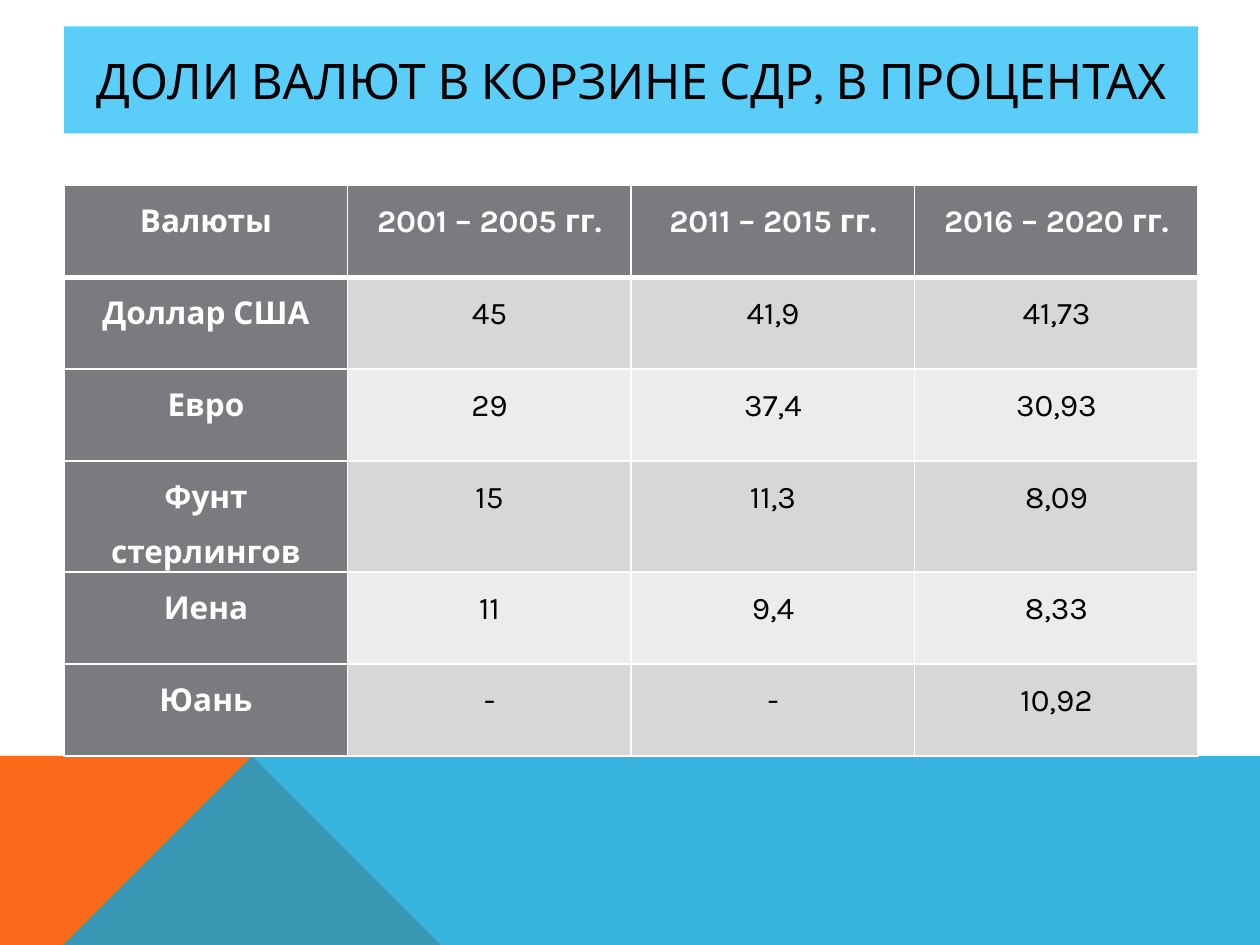
from dataclasses import dataclass

from lxml import etree
from pptx import Presentation
from pptx.dml.color import RGBColor
from pptx.enum import text
from pptx.oxml import ns
from pptx.util import Inches, Pt


@dataclass(frozen=True)
class Theme:
    font: str = "Karla"
    title_size: int = 28
    table_size: int = 18
    black: str = "000000"
    white: str = "FFFFFF"
    title_fill: str = "5ACEF9"
    header_fill: str = "797B7E"
    odd_fill: str = "D7D7D8"
    even_fill: str = "ECECEC"
    orange: str = "F96A1B"
    blue: str = "08A1D9"


@dataclass(frozen=True)
class Band:
    points: tuple[tuple[float, float], ...]
    color: str
    opacity: int = 100


THEME = Theme()
LEFT, WIDTH = 0.51, 9
ROW_HEIGHT = 0.73

BANDS = (
    Band(((0, 7.5), (0, 5.52), (2.23, 5.52), (3.91, 7.5)), THEME.orange),
    Band(((0, 7.5), (2.23, 5.52), (10, 5.53), (10, 7.5)), THEME.blue, 80),
)

ROWS = (
    ("Валюты", "2001 – 2005 гг.", "2011 – 2015 гг.", "2016 – 2020 гг."),
    ("Доллар США", "45", "41,9", "41,73"),
    ("Евро", "29", "37,4", "30,93"),
    ("Фунт стерлингов", "15", "11,3", "8,09"),
    ("Иена", "11", "9,4", "8,33"),
    ("Юань", "-", "-", "10,92"),
)


def set_fill(target, color: str) -> None:
    target.fill.solid()
    target.fill.fore_color.rgb = RGBColor.from_string(color)


def style_paragraph(paragraph, size: int, color: str, bold: bool = False) -> None:
    paragraph.alignment = text.PP_ALIGN.CENTER
    paragraph.font.name = THEME.font
    paragraph.font.size = Pt(size)
    paragraph.font.bold = bold
    paragraph.font.color.rgb = RGBColor.from_string(color)


def add_band(slide, band: Band) -> None:
    start, *others = band.points
    builder = slide.shapes.build_freeform(*start, scale=Inches(1))
    builder.add_line_segments(others, close=True)
    shape = builder.convert_to_shape()
    shape.shadow.inherit = False
    set_fill(shape, band.color)
    shape.line.fill.background()
    if band.opacity < 100:
        color = shape._element.spPr.find(".//" + ns.qn("a:srgbClr"))
        etree.SubElement(color, ns.qn("a:alpha"), val=str(band.opacity * 1000))


def format_title(title) -> None:
    title.left, title.top = Inches(LEFT), Inches(0.21)
    title.width, title.height = Inches(WIDTH), Inches(0.85)
    set_fill(title, THEME.title_fill)
    frame = title.text_frame
    frame.text = "ДОЛИ ВАЛЮТ В КОРЗИНЕ СДР, В ПРОЦЕНТАХ"
    frame.vertical_anchor = text.MSO_ANCHOR.MIDDLE
    style_paragraph(frame.paragraphs[0], THEME.title_size, THEME.black)


def set_borders(cell, row: int) -> None:
    """Draw white cell edges, with a thick rule under the header row."""
    widths = {"L": 1, "R": 1, "T": 3 if row == 1 else 1, "B": 3 if row == 0 else 1}
    properties = cell._tc.get_or_add_tcPr()
    for side, width in widths.items():
        line = etree.SubElement(properties, ns.qn(f"a:ln{side}"), w=str(Pt(width)))
        fill = etree.SubElement(line, ns.qn("a:solidFill"))
        etree.SubElement(fill, ns.qn("a:srgbClr"), val=THEME.white)


def format_cell(cell, row: int, column: int, words: str) -> None:
    is_header = row == 0 or column == 0
    cell.text = words
    cell.margin_left = cell.margin_right = Inches(0.07)
    cell.margin_top = cell.margin_bottom = 0
    paragraph = cell.text_frame.paragraphs[0]
    paragraph.line_spacing = 1.5
    paragraph.space_before = Pt(12)
    color = THEME.white if is_header else THEME.black
    style_paragraph(paragraph, THEME.table_size, color, bold=is_header)
    set_borders(cell, row)
    body_fill = THEME.odd_fill if row % 2 else THEME.even_fill
    set_fill(cell, THEME.header_fill if is_header else body_fill)


def add_currency_table(slide) -> None:
    table = slide.shapes.add_table(
        len(ROWS), len(ROWS[0]), Inches(LEFT), Inches(1.47),
        Inches(WIDTH), Inches(ROW_HEIGHT * len(ROWS)),
    ).table
    for row, values in enumerate(ROWS):
        for column, words in enumerate(values):
            format_cell(table.cell(row, column), row, column, words)


def main() -> None:
    presentation = Presentation()
    presentation.slide_width = Inches(10)
    presentation.slide_height = Inches(7.5)
    title_only = presentation.slide_layouts[5]
    slide = presentation.slides.add_slide(title_only)
    for band in BANDS:
        add_band(slide, band)
    format_title(slide.shapes.title)
    add_currency_table(slide)
    presentation.save("out.pptx")


if __name__ == "__main__":
    main()
